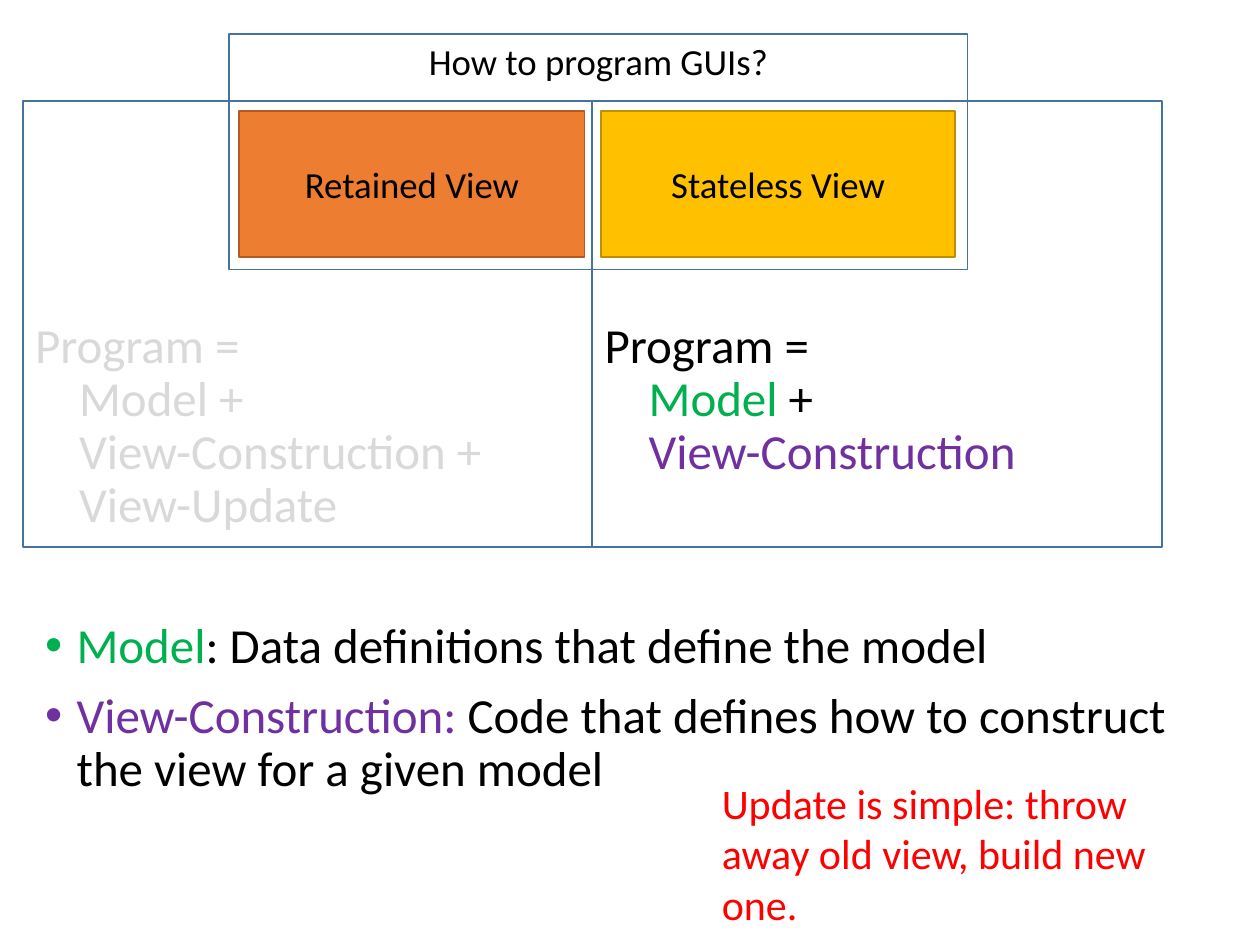
import pptx
import pptx.dml.color
import pptx.enum.shapes
import pptx.enum.text
import pptx.oxml
import pptx.oxml.ns
import pptx.util
from lxml import etree

Inches = pptx.util.Inches
Pt = pptx.util.Pt
ALIGN = pptx.enum.text.PP_ALIGN
ANCHOR = pptx.enum.text.MSO_ANCHOR

THEME = {
    "font": "Calibri",
    "size": {"label": 21, "body": 28, "callout": 24},
    "color": {
        "ink": "000000", "outline": "43739E", "faded": "D9D9D9",
        "model": "00B050", "construction": "7030A0", "callout": "FF0000",
        "retained": "ED7D31", "retained_line": "AF5C24",
        "stateless": "FFC000", "stateless_line": "BD8E00",
    },
}

QUESTION = "How to program GUIs?"
APPROACHES = [
    {
        "name": "Retained View", "color": "retained", "left": 1.9, "width": 2.74,
        "program": [
            [("Program =", "faded")],
            [("Model +", "faded")],
            [("View-Construction +", "faded")],
            [("View-Update", "faded")],
        ],
    },
    {
        "name": "Stateless View", "color": "stateless", "left": 4.77, "width": 2.81,
        "program": [
            [("Program =", "ink")],
            [("Model ", "model"), ("+", "ink")],
            [("View-Construction", "construction")],
        ],
    },
]
DEFINITIONS = [
    [("Model", "model"), (": Data definitions that define the model", "ink")],
    [("View-Construction: ", "construction"),
     ("Code that defines how to construct the view for a given model", "ink")],
]
REMARK = [[("Update is simple: throw away old view, build new one.", "callout")]]

PANEL_LEFT, PANEL_TOP, PANEL_WIDTH, PANEL_HEIGHT = 0.18, 0.8, 4.52, 3.54
PROGRAM_TOP, PROGRAM_HEIGHT, PROGRAM_INDENT = 2.5, 1.91, 0.35


def rgb(color):
    return pptx.dml.color.RGBColor.from_string(THEME["color"][color])


def style(run, size, color):
    run.font.name = THEME["font"]
    run.font.size = Pt(THEME["size"][size])
    run.font.color.rgb = rgb(color)


def add_box(slide, place, line, fill=None, label=None, anchor=ANCHOR.MIDDLE):
    box = slide.shapes.add_shape(
        pptx.enum.shapes.MSO_SHAPE.RECTANGLE, *map(Inches, place))
    box.shadow.inherit = False
    box.line.color.rgb = rgb(line)
    box.line.width = Pt(1)
    if fill:
        box.fill.solid()
        box.fill.fore_color.rgb = rgb(fill)
    else:
        box.fill.background()
    if label:
        frame = box.text_frame
        frame.margin_left = frame.margin_right = Inches(0.07)
        frame.margin_top = frame.margin_bottom = Inches(0.04)
        frame.vertical_anchor = anchor
        frame.text = label
        frame.paragraphs[0].alignment = ALIGN.CENTER
        style(frame.paragraphs[0].runs[0], "label", "ink")


def add_text(slide, place, lines, size):
    frame = slide.shapes.add_textbox(*map(Inches, place)).text_frame
    frame.word_wrap = True
    for index, pieces in enumerate(lines):
        paragraph = frame.paragraphs[0] if index == 0 else frame.add_paragraph()
        for words, color in pieces:
            run = paragraph.add_run()
            run.text = words
            style(run, size, color)
    return frame


def indent(paragraph, left, first=0):
    properties = paragraph._p.get_or_add_pPr()
    properties.set("marL", str(Inches(left)))
    properties.set("indent", str(Inches(first)))
    return properties


def add_program(slide, left, lines):
    frame = add_text(
        slide, (left, PROGRAM_TOP, PANEL_WIDTH, PROGRAM_HEIGHT), lines, "body")
    for index, paragraph in enumerate(frame.paragraphs):
        paragraph.line_spacing = 0.9
        paragraph.space_before = Pt(0 if index else 10)
        if index:
            indent(paragraph, PROGRAM_INDENT)


def add_definitions(slide):
    frame = add_text(slide, (0.26, 4.88, 9.58, 2.6), DEFINITIONS, "body")
    for paragraph in frame.paragraphs:
        paragraph.line_spacing = 0.9
        paragraph.space_before = Pt(10)
        properties = indent(paragraph, 0.25, -0.25)
        for tag, key, value in (("a:buFont", "typeface", "Arial"),
                                ("a:buChar", "char", "•")):
            etree.SubElement(properties, pptx.oxml.ns.qn(tag)).set(key, value)


def main():
    deck = pptx.Presentation()
    deck.slide_width, deck.slide_height = Inches(10), Inches(7.5)
    slide = deck.slides.add_slide(deck.slide_layouts[6])

    add_box(slide, (1.82, 0.27, 5.86, 1.87), "outline",
            label=QUESTION, anchor=ANCHOR.TOP)
    for column, approach in enumerate(APPROACHES):
        left = PANEL_LEFT + column * PANEL_WIDTH
        color = approach["color"]
        add_box(slide, (left, PANEL_TOP, PANEL_WIDTH, PANEL_HEIGHT), "outline")
        add_box(slide, (approach["left"], 0.88, approach["width"], 1.16),
                color + "_line", color, approach["name"])
        add_program(slide, left, approach["program"])
    add_definitions(slide)
    remark = add_text(slide, (5.63, 6.12, 4.09, 1.31), REMARK, "callout")
    remark.auto_size = pptx.enum.text.MSO_AUTO_SIZE.SHAPE_TO_FIT_TEXT

    deck.save("out.pptx")


if __name__ == "__main__":
    main()
